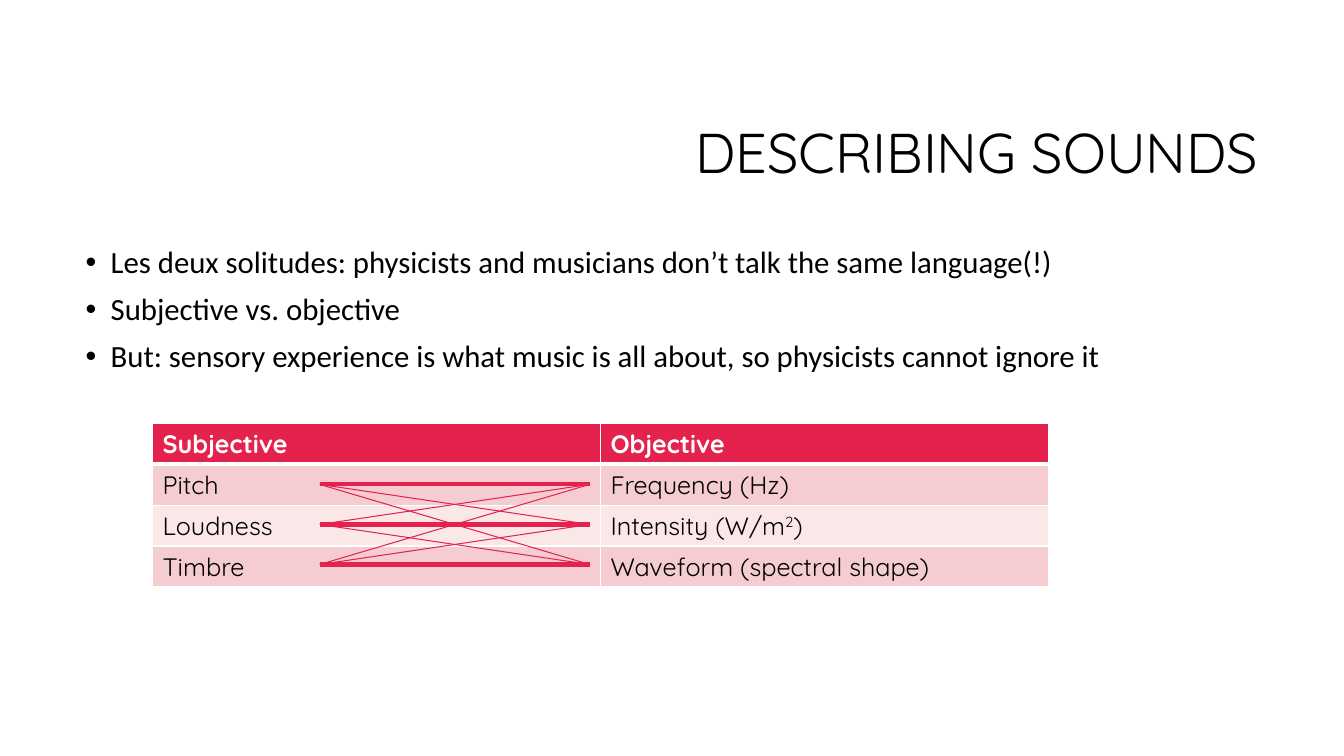
from itertools import product

from pptx import Presentation
from pptx.dml.color import RGBColor
from pptx.enum.shapes import MSO_CONNECTOR
from pptx.enum.text import MSO_ANCHOR, PP_ALIGN
from pptx.oxml.ns import qn
from pptx.util import Pt
from lxml.etree import SubElement

TITLE = "DESCRIBING SOUNDS"
POINTS = [
    "Les deux solitudes: physicists and musicians don’t talk the same language(!)",
    "Subjective vs. objective",
    "But: sensory experience is what music is all about, so physicists cannot ignore it",
]
# Each cell is a list of (text, baseline shift in percent)
ROWS = [
    ([("Subjective", 0)], [("Objective", 0)]),
    ([("Pitch", 0)], [("Frequency (Hz)", 0)]),
    ([("Loudness", 0)], [("Intensity (W/m", 0), ("2", 30), (")", 0)]),
    ([("Timbre", 0)], [("Waveform (spectral shape)", 0)]),
]

BLACK = RGBColor(0x00, 0x00, 0x00)
WHITE = RGBColor(0xFF, 0xFF, 0xFF)
CRIMSON = RGBColor(0xE5, 0x22, 0x4E)
ROSE = RGBColor(0xF5, 0xCD, 0xD0)
BLUSH = RGBColor(0xFA, 0xE8, 0xE9)
HEADING_FONT, BODY_FONT = "Quicksand", "Calibri"

TABLE_LEFT, TABLE_TOP, TABLE_WIDTH, ROW_HEIGHT = 108.9, 302.4, 640, 29.2
LINK_LEFT, LINK_RIGHT, LINK_TOP, LINK_STEP = 228.4, 421.2, 346, 28.6


def style(span, name, size, color, bold=False):
    span.font.name, span.font.size, span.font.bold = name, Pt(size), bold
    span.font.color.rgb = color


def add_text(page, left, top, width, height, lines):
    box = page.shapes.add_textbox(Pt(left), Pt(top), Pt(width), Pt(height))
    frame = box.text_frame
    frame.word_wrap = True
    frame.text = "\n".join(lines)
    for para in frame.paragraphs:
        para.line_spacing = 0.9
    return frame


def add_bullet(para):
    props = para._p.get_or_add_pPr()
    props.set("marL", str(Pt(18)))
    props.set("indent", str(Pt(-18)))
    SubElement(props, qn("a:buFont"), typeface="Arial")
    SubElement(props, qn("a:buChar"), char="•")


def add_borders(cell, row):
    """Draw thin white borders, thick between the header and the first row."""
    thick_side = {0: "lnB", 1: "lnT"}.get(row)
    for side in ("lnL", "lnR", "lnT", "lnB"):
        width = Pt(3 if side == thick_side else 1)
        line = SubElement(cell._tc.get_or_add_tcPr(), qn("a:" + side), w=str(width))
        SubElement(SubElement(line, qn("a:solidFill")), qn("a:srgbClr"), val=str(WHITE))


def add_terms_table(page):
    table = page.shapes.add_table(
        len(ROWS), 2, Pt(TABLE_LEFT), Pt(TABLE_TOP),
        Pt(TABLE_WIDTH), Pt(ROW_HEIGHT * len(ROWS))).table
    for row, col in product(range(len(ROWS)), range(2)):
        cell = table.cell(row, col)
        add_borders(cell, row)
        cell.fill.solid()
        cell.fill.fore_color.rgb = CRIMSON if row == 0 else (BLUSH, ROSE)[row % 2]
        para = cell.text_frame.paragraphs[0]
        for text, shift in ROWS[row][col]:
            span = para.add_run()
            span.text = text
            style(span, HEADING_FONT, 18, BLACK if row else WHITE, bold=row == 0)
            if shift:
                span._r.get_or_add_rPr().set("baseline", str(shift * 1000))


def add_link(page, start, end):
    """Join a subjective term to an objective one, boldly if they match."""
    link = page.shapes.add_connector(
        MSO_CONNECTOR.STRAIGHT,
        Pt(LINK_LEFT), Pt(LINK_TOP + start * LINK_STEP),
        Pt(LINK_RIGHT), Pt(LINK_TOP + end * LINK_STEP))
    link.line.color.rgb = CRIMSON
    link.line.width = Pt(3 if start == end else 0.75)
    SubElement(link._element.spPr, qn("a:effectLst"))


def main():
    deck = Presentation()
    deck.slide_width, deck.slide_height = Pt(960), Pt(540)
    page = deck.slides.add_slide(deck.slide_layouts[6])

    title = add_text(page, 228, 60.5, 678, 101.5, [TITLE])
    title.vertical_anchor = MSO_ANCHOR.MIDDLE
    title.paragraphs[0].alignment = PP_ALIGN.RIGHT
    style(title.paragraphs[0].runs[0], HEADING_FONT, 40, BLACK)

    body = add_text(page, 54, 172.8, 852, 316.8, POINTS)
    for index, para in enumerate(body.paragraphs):
        para.space_before = Pt(10 if index else 0)
        add_bullet(para)
        style(para.runs[0], BODY_FONT, 22, BLACK)

    add_terms_table(page)
    for start, end in product(range(3), repeat=2):
        add_link(page, start, end)

    deck.save("out.pptx")


if __name__ == "__main__":
    main()
